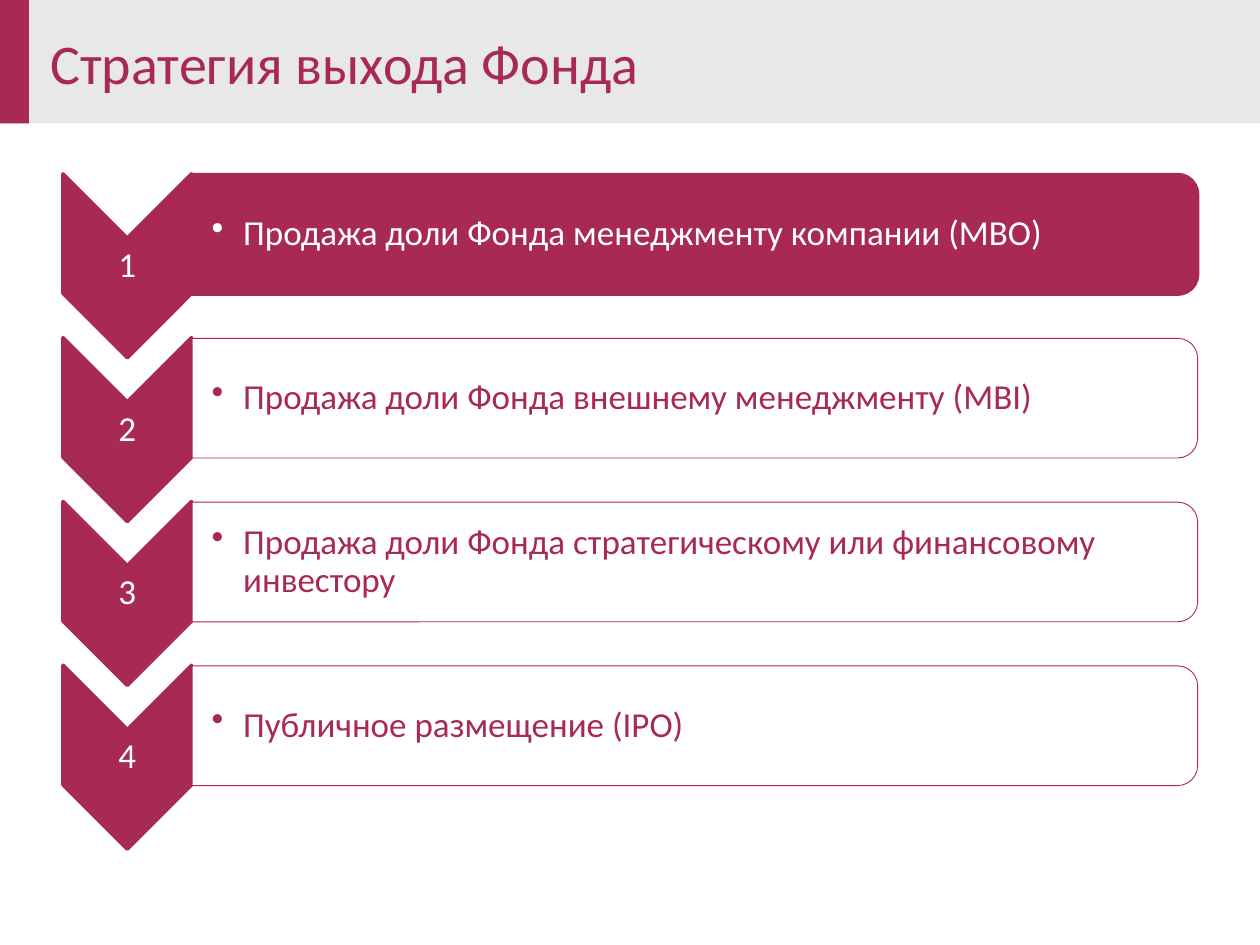
import pptx
import pptx.util
from lxml import etree
from pptx.dml.color import RGBColor
from pptx.enum.shapes import MSO_SHAPE
from pptx.enum.text import MSO_ANCHOR, PP_ALIGN
from pptx.oxml.ns import qn
from pptx.util import Inches

COLORS = {"accent": "A82A54", "band": "E8E8E8", "white": "FFFFFF"}
STRATEGIES = [
    "Продажа доли Фонда менеджменту компании (MBO)",
    "Продажа доли Фонда внешнему менеджменту (MBI)",
    "Продажа доли Фонда стратегическому или финансовому инвестору",
    "Публичное размещение (IPO)",
]
ROW_STEP = 1.3

presentation = pptx.Presentation()
presentation.slide_width = Inches(10)
presentation.slide_height = Inches(7.5)
slide = presentation.slides.add_slide(presentation.slide_layouts[6])


def add_block(kind, left, top, width, height, fill, line_width=0, rotation=0):
    shape = slide.shapes.add_shape(
        kind, Inches(left), Inches(top), Inches(width), Inches(height))
    shape.shadow.inherit = False
    shape.rotation = rotation
    shape.fill.solid()
    shape.fill.fore_color.rgb = RGBColor.from_string(COLORS[fill])
    if line_width:
        shape.line.color.rgb = RGBColor.from_string(COLORS["accent"])
        shape.line.width = pptx.util.Pt(line_width)
    else:
        shape.line.fill.background()


def add_text(text, left, top, width, height, size, color, inset=None, bullet=False):
    box = slide.shapes.add_textbox(
        Inches(left), Inches(top), Inches(width), Inches(height))
    frame = box.text_frame
    frame.word_wrap = True
    frame.vertical_anchor = MSO_ANCHOR.MIDDLE
    paragraph = frame.paragraphs[0]
    paragraph.text = text
    if inset is not None:
        frame.margin_left = Inches(inset)
        frame.margin_right = frame.margin_top = frame.margin_bottom = Inches(0.01)
        paragraph.line_spacing = 0.9
    if bullet:
        properties = paragraph._p.get_or_add_pPr()
        properties.set("marL", str(Inches(0.25)))
        properties.set("indent", str(Inches(-0.25)))
        etree.SubElement(properties, qn("a:buChar"), char="•")
    paragraph.font.name = "Calibri"
    paragraph.font.size = pptx.util.Pt(size)
    paragraph.font.color.rgb = RGBColor.from_string(COLORS[color])
    return paragraph


add_block(MSO_SHAPE.RECTANGLE, 0, 0, 10, 0.98, "band")
add_block(MSO_SHAPE.RECTANGLE, -0.01, 0, 0.24, 0.98, "accent")
add_text("Стратегия выхода Фонда", 0.3, 0.01, 9.43, 0.97, 32, "accent")

for index, strategy in enumerate(STRATEGIES):
    offset = index * ROW_STEP
    highlighted = index == 0
    add_block(MSO_SHAPE.CHEVRON, 0.28, 1.6 + offset, 1.46, 1.02, "accent", 2, 90)
    number = add_text(str(index + 1), 0.5, 1.89 + offset, 1.02, 0.44, 20, "white", 0.01)
    number.alignment = PP_ALIGN.CENTER
    add_block(MSO_SHAPE.ROUND_2_SAME_RECTANGLE, 5.04, -2.13 + offset, 0.95, 7.98,
              "accent" if highlighted else "white", 2 if highlighted else 0.5, 90)
    add_text(strategy, 1.52, 1.43 + offset, 7.93, 0.86, 20,
             "white" if highlighted else "accent", 0.16, bullet=True)

presentation.save("out.pptx")
